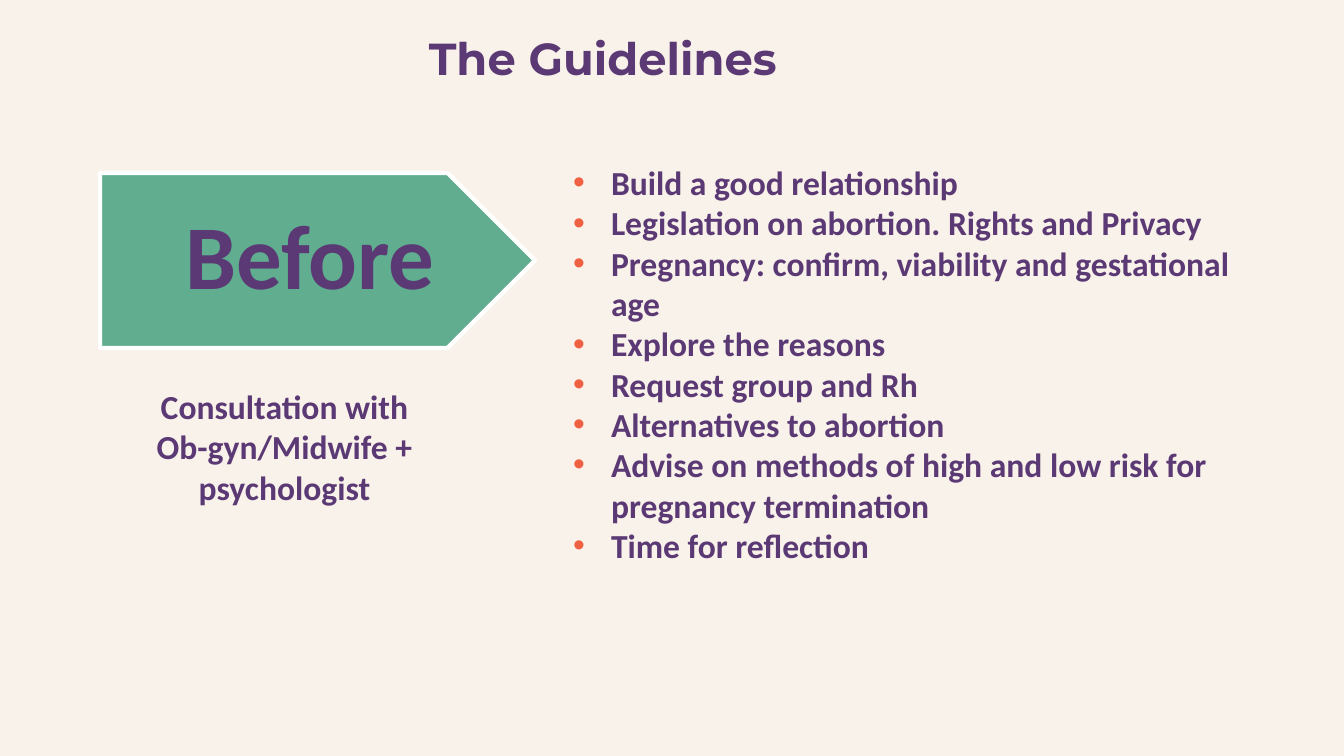
from dataclasses import dataclass

from lxml import etree
from pptx import Presentation
from pptx.dml.color import RGBColor
from pptx.enum.shapes import MSO_SHAPE
from pptx.enum.text import MSO_ANCHOR, PP_ALIGN
from pptx.oxml.ns import qn
from pptx.util import Emu, Pt

PENTAGON = MSO_SHAPE.PENTAGON
TOP, MIDDLE = MSO_ANCHOR.TOP, MSO_ANCHOR.MIDDLE
LEFT, CENTER = PP_ALIGN.LEFT, PP_ALIGN.CENTER
PX_PER_INCH = 100.8


def px(length):
    return Emu(round(length * 914400 / PX_PER_INCH))


@dataclass(frozen=True)
class Theme:
    background: str = "F9F2EA"
    ink: str = "5B3974"
    arrow: str = "60AD8F"
    outline: str = "FFFFFF"
    bullet: str = "F06043"
    title_font: str = "Montserrat"
    body_font: str = "Calibri"
    title_size: int = 32
    body_size: int = 24
    stage_size: int = 65
    outline_width: int = 3


def add_bullet(paragraph, color, indent):
    properties = paragraph._p.get_or_add_pPr()
    properties.set("marL", str(px(indent)))
    properties.set("indent", str(-px(indent)))
    bullet_color = etree.SubElement(properties, qn("a:buClr"))
    etree.SubElement(bullet_color, qn("a:srgbClr"), val=color)
    etree.SubElement(properties, qn("a:buFont"), typeface="Arial")
    etree.SubElement(properties, qn("a:buChar"), char="•")


def write_text(frame, lines, *, font, size, color, align=LEFT, anchor=TOP,
               insets=(10, 5, 10, 5), line_spacing=None, bullet=None):
    frame.word_wrap = True
    frame.vertical_anchor = anchor
    (frame.margin_left, frame.margin_top,
     frame.margin_right, frame.margin_bottom) = map(px, insets)
    for index, line in enumerate(lines):
        paragraph = frame.add_paragraph() if index else frame.paragraphs[0]
        paragraph.alignment = align
        if line_spacing:
            paragraph.line_spacing = line_spacing
        if bullet:
            add_bullet(paragraph, bullet, 38)
        run = paragraph.add_run()
        run.text = line
        run.font.name = font
        run.font.size = Pt(size)
        run.font.bold = True
        run.font.color.rgb = RGBColor.from_string(color)


class SlideBuilder:
    def __init__(self, presentation, theme):
        self.theme = theme
        self.slide = presentation.slides.add_slide(presentation.slide_layouts[6])
        fill = self.slide.background.fill
        fill.solid()
        fill.fore_color.rgb = RGBColor.from_string(theme.background)

    def text(self, box, lines, **style):
        defaults = {"font": self.theme.body_font, "size": self.theme.body_size,
                    "color": self.theme.ink}
        shape = self.slide.shapes.add_textbox(*map(px, box))
        write_text(shape.text_frame, lines, **(defaults | style))

    def arrow(self, box):
        shape = self.slide.shapes.add_shape(PENTAGON, *map(px, box))
        shape.shadow.inherit = False
        shape.fill.solid()
        shape.fill.fore_color.rgb = RGBColor.from_string(self.theme.arrow)
        shape.line.color.rgb = RGBColor.from_string(self.theme.outline)
        shape.line.width = Pt(self.theme.outline_width)


def main():
    theme = Theme()
    presentation = Presentation()
    presentation.slide_width = px(1344)
    presentation.slide_height = px(756)
    builder = SlideBuilder(presentation, theme)

    builder.text((359, 26, 488, 65), ["The Guidelines"],
                 font=theme.title_font, size=theme.title_size, align=CENTER)
    builder.text((136, 381, 297, 132),
                 ["Consultation with Ob-gyn/Midwife +", "psychologist"],
                 align=CENTER)
    builder.arrow((100, 173, 435, 175))
    builder.text((100, 173, 391, 175), ["Before"], size=theme.stage_size,
                 align=CENTER, anchor=MIDDLE, insets=(38, 19, 9, 19),
                 line_spacing=0.9)
    builder.text((563, 157, 720, 448), [
        "Build a good relationship",
        "Legislation on abortion. Rights and Privacy",
        "Pregnancy: confirm, viability and gestational age",
        "Explore the reasons",
        "Request group and Rh",
        "Alternatives to abortion",
        "Advise on methods of high and low risk for pregnancy termination",
        "Time for reflection",
    ], bullet=theme.bullet)
    presentation.save("out.pptx")


if __name__ == "__main__":
    main()
